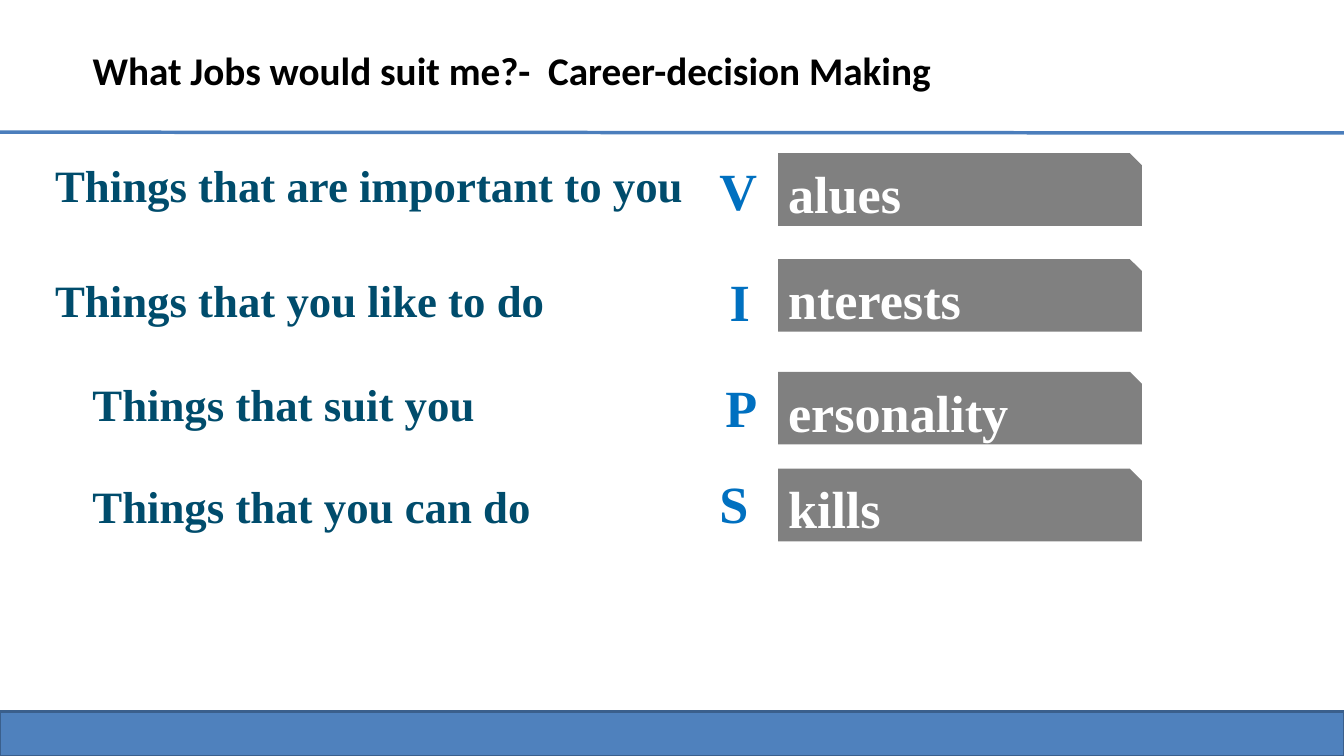
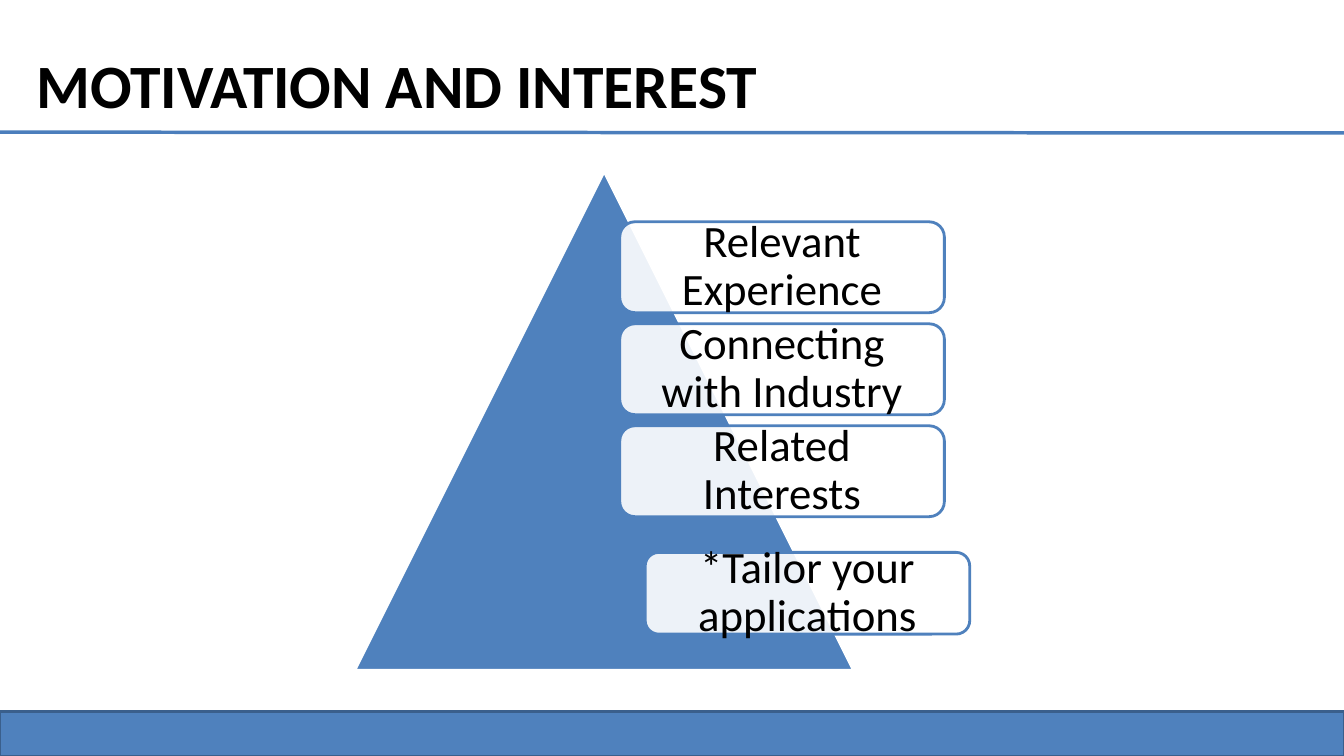
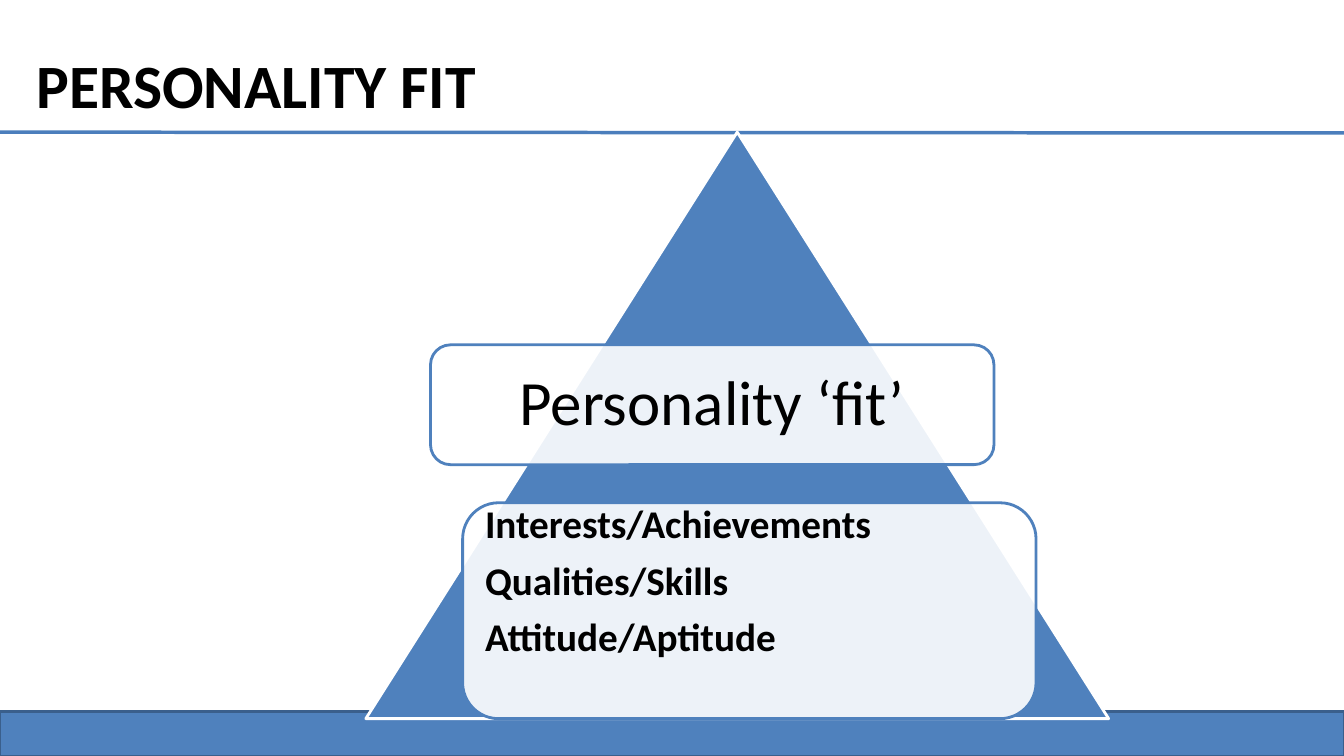
"""Build three career-advice slides with a shared band, rule and title style."""
from lxml.etree import SubElement
from pptx import Presentation
from pptx.dml.color import RGBColor
from pptx.enum.shapes import MSO_CONNECTOR, MSO_SHAPE
from pptx.enum.text import MSO_ANCHOR, MSO_AUTO_SIZE, PP_ALIGN
from pptx.oxml.ns import qn
from pptx.util import Cm, Pt

BLUE, WHITE, BLACK, GREY = "4F81BD", "FFFFFF", "000000", "808080"
NAVY, AZURE = "004C6C", "0070C0"
SANS, SERIF = "Calibri", "Times New Roman"


def draw(slide, kind, box, fill, line=None, alpha=None):
    """Add a filled shape at box, given in centimetres."""
    shape = slide.shapes.add_shape(kind, *map(Cm, box))
    shape.shadow.inherit = False
    shape.fill.solid()
    shape.fill.fore_color.rgb = RGBColor.from_string(fill)
    if alpha:
        tint = shape.element.spPr.find(qn("a:solidFill"))[0]
        SubElement(tint, qn("a:alpha"), val=str(alpha * 1000))
    if line:
        shape.line.color.rgb = RGBColor.from_string(line)
        shape.line.width = Pt(2)
    else:
        shape.line.fill.background()
    return shape


def write(shape, text, size, color, font=SANS, bold=True, align=PP_ALIGN.LEFT,
          anchor=MSO_ANCHOR.MIDDLE, inset=None, tight=False):
    """Fill a shape with formatted text."""
    frame = shape.text_frame
    frame.text = text
    frame.word_wrap = True
    frame.auto_size = MSO_AUTO_SIZE.NONE
    frame.vertical_anchor = anchor
    if inset:
        frame.margin_left = frame.margin_right = Cm(inset)
        frame.margin_top = frame.margin_bottom = Cm(inset)
    for para in frame.paragraphs:
        para.alignment = align
        if tight:
            para.line_spacing = 0.9
            para.space_after = Pt(round(size * 0.35, 1))
        for run in para.runs:
            run.font.name = font
            run.font.size = Pt(size)
            run.font.bold = bold
            run.font.color.rgb = RGBColor.from_string(color)


deck = Presentation()
deck.slide_width, deck.slide_height = Cm(33.87), Cm(19.05)

wide = (0.66, 0.53, 30.48, 3.18)
titles = [
    ("What Jobs would suit me?-  Career-decision Making", 28, (2.08, 1.04, 25.04, 1.45)),
    ("MOTIVATION AND INTEREST", 44, wide),
    ("PERSONALITY FIT", 44, wide),
]
slides = []
for text, size, box in titles:
    slide = deck.slides.add_slide(deck.slide_layouts[5])
    title = slide.shapes.title
    title.left, title.top, title.width, title.height = map(Cm, box)
    write(title, text, size, BLACK)
    slides.append(slide)
jobs, drive, match = slides

band = draw(jobs, MSO_SHAPE.RECTANGLE, (0, 17.93, 33.87, 1.12), BLUE, "3A5F8C")
rule = jobs.shapes.add_connector(
    MSO_CONNECTOR.STRAIGHT, Cm(34.11), Cm(3.35), Cm(0), Cm(3.33))
rule.line.color.rgb = RGBColor.from_string("4B7EBC")
rule.line.width = Pt(2.5)
SubElement(rule.element.spPr, qn("a:effectLst"))
tree = deck.slide_master.element.cSld.spTree
for num, part in enumerate((band, rule)):
    part.element.xpath(".//p:cNvPr")[0].set("id", str(20 + num))
    tree.insert(2 + num, part.element)

rows = [
    ("Things that are important to you", 1.14, 3.86, "V", 17.88, 3.86, "alues", 3.86),
    ("Things that you like to do", 1.14, 6.76, "I", 18.14, 6.65, "nterests", 6.53),
    ("Things that suit you", 2.08, 9.37, "P", 18.03, 9.32, "ersonality", 9.37),
    ("Things that you can do", 2.08, 11.94, "S", 17.88, 11.76, "kills", 11.81),
]
for phrase, left, top, first, start, head, rest, level in rows:
    label = jobs.shapes.add_textbox(Cm(left), Cm(top), Cm(18), Cm(1.63))
    write(label, phrase, 32, NAVY, SERIF, anchor=MSO_ANCHOR.TOP)
    tag = draw(jobs, MSO_SHAPE.SNIP_1_RECTANGLE, (19.61, level, 9.17, 1.83), GREY)
    write(tag, rest, 37.3, WHITE, SERIF)
    letter = jobs.shapes.add_textbox(Cm(start), Cm(head), Cm(1.8), Cm(1.85))
    write(letter, first, 37.3, AZURE, SERIF, anchor=MSO_ANCHOR.TOP)

draw(drive, MSO_SHAPE.ISOSCELES_TRIANGLE, (8.94, 4.32, 12.57, 12.57), BLUE, WHITE)
steps = ["Relevant Experience", "Connecting with Industry", "Related Interests"]
cards = [(text, (15.62, 5.59 + 2.57 * num, 8.18, 2.29)) for num, text in enumerate(steps)]
cards.append(("*Tailor your applications", (16.26, 13.92, 8.18, 2.06)))
for text, box in cards:
    card = draw(drive, MSO_SHAPE.ROUNDED_RECTANGLE, box, WHITE, BLUE, 90)
    write(card, text, 32, BLACK, bold=False, align=PP_ALIGN.CENTER, inset=0.33, tight=True)

draw(match, MSO_SHAPE.ISOSCELES_TRIANGLE, (9.22, 3.33, 18.72, 14.78), BLUE, WHITE)
card = draw(match, MSO_SHAPE.ROUNDED_RECTANGLE, (10.85, 8.69, 14.2, 3.02), WHITE, BLUE, 90)
write(card, "Personality ‘fit’", 45, BLACK, bold=False, align=PP_ALIGN.CENTER,
      inset=0.48, tight=True)
traits = ["Interests/Achievements", "Qualities/Skills", "Attitude/Aptitude"]
card = draw(match, MSO_SHAPE.ROUNDED_RECTANGLE, (11.66, 12.67, 14.45, 5.44), WHITE, BLUE, 90)
write(card, "\n".join(traits), 28, BLACK, inset=0.3, tight=True)
card.text_frame.margin_bottom = Cm(1.73)

deck.save("out.pptx")
